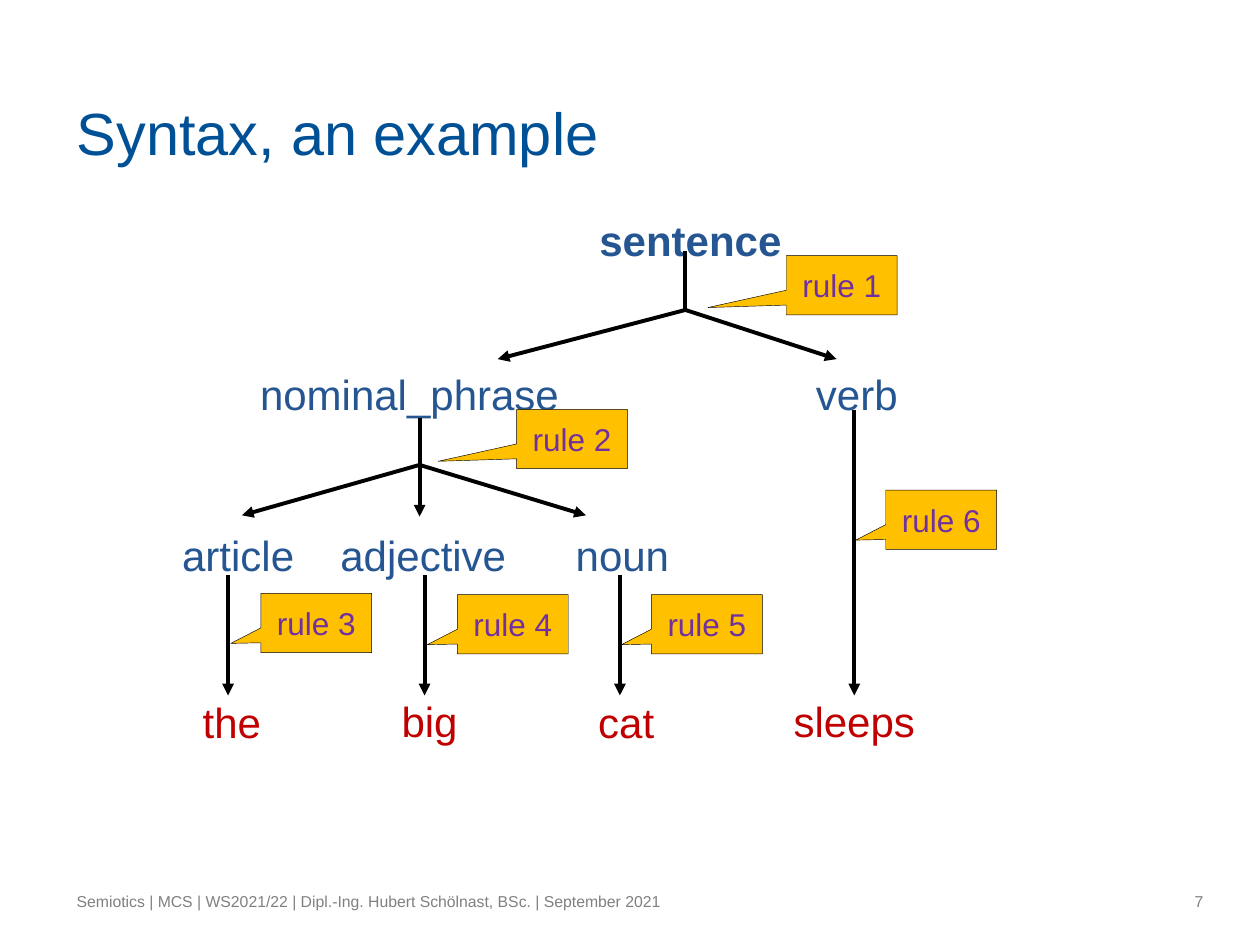
import dataclasses
import typing

import lxml.etree
import pptx
import pptx.dml.color
import pptx.enum.shapes
import pptx.enum.text
import pptx.oxml.ns
import pptx.util

ALIGN = pptx.enum.text.PP_ALIGN
ANCHOR = pptx.enum.text.MSO_ANCHOR
COLUMNS, ROWS = 100, 75


@dataclasses.dataclass(frozen=True)
class Theme:
    font: str = "Arial"
    heading: str = "005096"
    category: str = "255692"
    word: str = "C00000"
    rule: str = "7030A0"
    callout: str = "FFC000"
    branch: str = "000000"
    footer: str = "808080"
    title_size: float = 34
    node_size: float = 24
    rule_size: float = 18
    footer_size: float = 9
    branch_width: float = 2.25
    outline_width: float = 0.25


class Node(typing.NamedTuple):
    text: str
    center: float
    top: float
    color: str
    bold: bool = False


class Branch(typing.NamedTuple):
    start: tuple[float, float]
    end: tuple[float, float]
    arrow: bool = True


class Rule(typing.NamedTuple):
    number: int
    left: float
    top: float
    pointer: tuple[float, float]


THEME = Theme()
NODE_WIDTH, NODE_HEIGHT = 30, 6.3
RULE_WIDTH, RULE_HEIGHT = 8.8, 4.7
FOOTER_TOP, FOOTER_HEIGHT = 69.5, 4
FAR_POINTER, NEAR_POINTER = (-1.208, 0.376), (-0.771, 0.345)
SENTENCE_FORK, PHRASE_FORK = (54.4, 24.6), (33.3, 36.9)
LEAF_TOP, LEAF_BOTTOM = 45.6, 55.2

NODES = [
    Node("sentence", 54.8, 16.3, THEME.category, bold=True),
    Node("nominal_phrase", 32.5, 28.6, THEME.category),
    Node("verb", 68, 28.6, THEME.category),
    Node("article", 18.9, 41.3, THEME.category),
    Node("adjective", 33.6, 41.3, THEME.category),
    Node("noun", 49.4, 41.3, THEME.category),
    Node("the", 18.4, 54.6, THEME.word),
    Node("big", 34.1, 54.5, THEME.word),
    Node("cat", 49.7, 54.6, THEME.word),
    Node("sleeps", 67.8, 54.5, THEME.word),
]
BRANCHES = [
    Branch((54.4, 19.9), SENTENCE_FORK, arrow=False),
    Branch(SENTENCE_FORK, (39.5, 28.5)),
    Branch(SENTENCE_FORK, (66.4, 28.5)),
    Branch((33.3, 33.2), PHRASE_FORK, arrow=False),
    Branch(PHRASE_FORK, (19.2, 40.9)),
    Branch(PHRASE_FORK, (46.5, 40.9)),
    Branch(PHRASE_FORK, (33.3, 41)),
    *(Branch((x, LEAF_TOP), (x, LEAF_BOTTOM)) for x in (18.1, 33.7, 49.2)),
    Branch((67.8, 32.5), (67.8, LEAF_BOTTOM)),
]
RULES = [
    Rule(1, 62.4, 20.3, FAR_POINTER),
    Rule(2, 41, 32.5, FAR_POINTER),
    Rule(3, 20.7, 47.1, NEAR_POINTER),
    Rule(4, 36.3, 47.2, NEAR_POINTER),
    Rule(5, 51.7, 47.2, NEAR_POINTER),
    Rule(6, 70.3, 38.9, NEAR_POINTER),
]

deck = pptx.Presentation()
deck.slide_width = pptx.util.Inches(10)
deck.slide_height = pptx.util.Inches(7.5)


def rgb(color: str) -> pptx.dml.color.RGBColor:
    return pptx.dml.color.RGBColor.from_string(color)


def across(columns: float) -> int:
    return round(deck.slide_width * columns / COLUMNS)


def down(rows: float) -> int:
    return round(deck.slide_height * rows / ROWS)


def area(left: float, top: float, width: float, height: float) -> tuple[int, ...]:
    return across(left), down(top), across(width), down(height)


def write(shape, text: str, *, size: float, color: str, align=ALIGN.LEFT,
          anchor=ANCHOR.MIDDLE, bold: bool = False, wrap: bool = True,
          line_spacing: float = 1.0) -> None:
    frame = shape.text_frame
    frame.auto_size = pptx.enum.text.MSO_AUTO_SIZE.NONE
    frame.word_wrap = wrap
    frame.vertical_anchor = anchor
    paragraph = frame.paragraphs[0]
    paragraph.alignment = align
    paragraph.line_spacing = line_spacing
    run = paragraph.add_run()
    run.text = text
    run.font.name = THEME.font
    run.font.size = pptx.util.Pt(size)
    run.font.bold = bold
    run.font.color.rgb = rgb(color)


def draw_node(slide, node: Node) -> None:
    box = slide.shapes.add_textbox(
        *area(node.center - NODE_WIDTH / 2, node.top, NODE_WIDTH, NODE_HEIGHT))
    write(box, node.text, size=THEME.node_size, color=node.color, bold=node.bold,
          align=ALIGN.CENTER, anchor=ANCHOR.TOP, line_spacing=1.05)


def draw_branch(slide, branch: Branch) -> None:
    (x1, y1), (x2, y2) = branch.start, branch.end
    connector = slide.shapes.add_connector(
        pptx.enum.shapes.MSO_CONNECTOR.STRAIGHT,
        across(x1), down(y1), across(x2), down(y2))
    connector.line.color.rgb = rgb(THEME.branch)
    connector.line.width = pptx.util.Pt(THEME.branch_width)
    if branch.arrow:
        lxml.etree.SubElement(connector.line._get_or_add_ln(),
                              pptx.oxml.ns.qn("a:tailEnd"), type="triangle")
    lxml.etree.SubElement(connector._element.spPr, pptx.oxml.ns.qn("a:effectLst"))


def draw_rule(slide, rule: Rule) -> None:
    callout = slide.shapes.add_shape(
        pptx.enum.shapes.MSO_SHAPE.RECTANGULAR_CALLOUT,
        *area(rule.left, rule.top, RULE_WIDTH, RULE_HEIGHT))
    callout.adjustments[0], callout.adjustments[1] = rule.pointer
    callout.shadow.inherit = False
    callout.fill.solid()
    callout.fill.fore_color.rgb = rgb(THEME.callout)
    callout.line.color.rgb = rgb(THEME.branch)
    callout.line.width = pptx.util.Pt(THEME.outline_width)
    write(callout, f"rule {rule.number}", size=THEME.rule_size, color=THEME.rule,
          align=ALIGN.CENTER, wrap=False)


def draw_footer(slide, text: str, left: float, width: float, align) -> None:
    box = slide.shapes.add_textbox(*area(left, FOOTER_TOP, width, FOOTER_HEIGHT))
    write(box, text, size=THEME.footer_size, color=THEME.footer, align=align)


def main() -> None:
    slide = deck.slides.add_slide(deck.slide_layouts[5])
    title = slide.shapes.title
    title.left, title.top, title.width, title.height = area(5.1, 6.9, 69.7, 7.1)
    write(title, "Syntax, an example", size=THEME.title_size, color=THEME.heading)
    for node in NODES:
        draw_node(slide, node)
    for branch in BRANCHES:
        draw_branch(slide, branch)
    for rule in RULES:
        draw_rule(slide, rule)
    draw_footer(
        slide,
        "Semiotics | MCS | WS2021/22 | Dipl.-Ing. Hubert Schölnast, BSc. | September 2021",
        5.1, 57.1, ALIGN.LEFT)
    draw_footer(slide, "7", 82.2, 14.3, ALIGN.RIGHT)
    deck.save("out.pptx")


if __name__ == "__main__":
    main()
